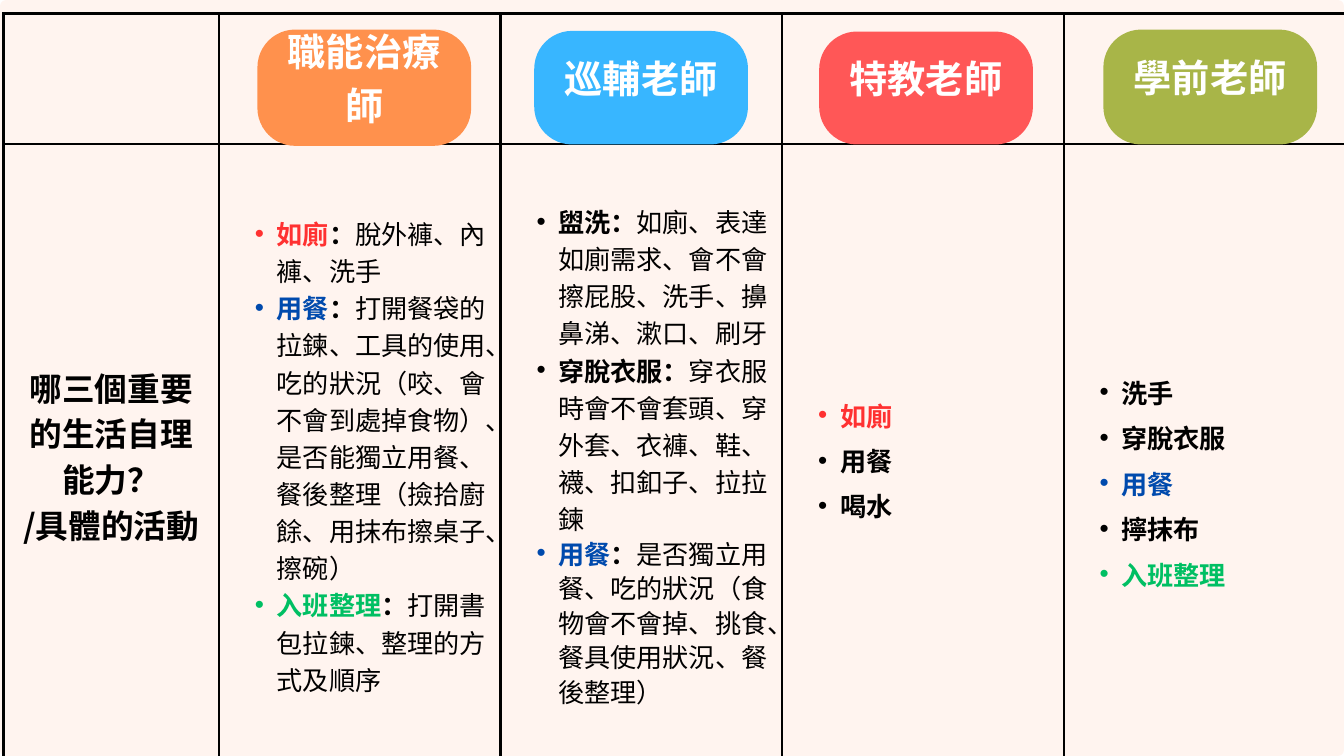
from dataclasses import dataclass

from lxml import etree
from pptx import Presentation
from pptx.dml.color import RGBColor
from pptx.enum.shapes import MSO_SHAPE
from pptx.enum.text import MSO_ANCHOR, PP_ALIGN
from pptx.oxml.ns import qn
from pptx.util import Pt

ROUND = MSO_SHAPE.ROUNDED_RECTANGLE
MIDDLE = MSO_ANCHOR.MIDDLE
CENTER = PP_ALIGN.CENTER
FONT = "Noto Sans CJK SC"
WIDE, HIGH = 1440, 810
COLORS = {
    "paper": "FFF4EF", "black": "000000", "white": "FFFFFF",
    "red": "FF3131", "blue": "004AAD", "green": "00BF63",
    "orange": "FF914D", "sky": "38B6FF", "coral": "FF5757", "olive": "A8B548",
}


@dataclass
class Pill:
    label: str
    color: str
    left: float
    top: float
    height: float


@dataclass
class Item:
    head: str
    color: str = "black"
    body: str = ""
    pitch: float = 48.7


@dataclass
class Column:
    items: list[Item]
    drop: float = 0


PILLS = [
    Pill("職能治療師", "orange", 275.8, 31.7, 124.6),
    Pill("巡輔老師", "sky", 572.4, 33.1, 121.7),
    Pill("特教老師", "coral", 877.7, 33.8, 121),
    Pill("學前老師", "olive", 1182.2, 31.7, 123.1),
]
COLUMNS = [
    Column([
        Item("如廁", "red", "脫外褲、內褲、洗手", 39.8),
        Item("用餐", "blue", "打開餐袋的拉鍊、工具的使用、吃的狀況（咬、會不會到處掉食物）、"
             "是否能獨立用餐、餐後整理（撿拾廚餘、用抹布擦桌子、擦碗）", 39.8),
        Item("入班整理", "green", "打開書包拉鍊、整理的方式及順序", 39.8),
    ]),
    Column([
        Item("盥洗", "black", "如廁、表達如廁需求、會不會擦屁股、洗手、擤鼻涕、漱口、刷牙", 39.8),
        Item("穿脫衣服", "black", "穿衣服時會不會套頭、穿外套、衣褲、鞋、襪、扣釦子、拉拉鍊", 39.8),
        Item("用餐", "blue", "是否獨立用餐、吃的狀況（食物會不會掉、挑食、餐具使用狀況、餐後整理）", 37),
    ]),
    Column([Item("如廁", "red"), Item("用餐"), Item("喝水")]),
    Column([Item("洗手"), Item("穿脫衣服"), Item("用餐", "blue"),
            Item("擰抹布"), Item("入班整理", "green")], drop=48.7),
]
ASK = ["哪三個重要的生活自理能力？", "/具體的活動"]
WIDTHS = [231.1] + [301.7] * 4
HEIGHTS = [139.7, 169.9, 169.9, 164.2, 165.6]


def shade(name: str) -> RGBColor:
    return RGBColor.from_string(COLORS[name])


def add_run(para, text: str, size: float, color: str, bold: bool = True) -> None:
    run = para.add_run()
    run.text = text
    font = run.font
    font.size, font.bold, font.name = Pt(size), bold, FONT
    font.color.rgb = shade(color)
    etree.SubElement(font._element, qn("a:ea"), typeface=FONT)


def next_para(frame, first: bool, pitch: float):
    para = frame.paragraphs[0] if first else frame.add_paragraph()
    para.line_spacing = Pt(pitch)
    return para


def add_block(slide, left: float, top: float, width: float, height: float,
              radius: float, color: str):
    block = slide.shapes.add_shape(ROUND, Pt(left), Pt(top), Pt(width), Pt(height))
    block.adjustments[0] = radius / min(width, height)
    block.shadow.inherit = False
    block.fill.solid()
    block.fill.fore_color.rgb = shade(color)
    block.line.fill.background()
    return block


def add_pill(slide, pill: Pill) -> None:
    block = add_block(slide, pill.left, pill.top, 229, pill.height, 40.5, pill.color)
    frame = block.text_frame
    frame.word_wrap = True
    frame.vertical_anchor = MIDDLE
    frame.margin_left = frame.margin_right = frame.margin_top = Pt(4.3)
    frame.margin_bottom = Pt(32.8)
    para = next_para(frame, True, 57.4)
    para.alignment = CENTER
    add_run(para, pill.label, 41, "white")


def add_bullet(para) -> None:
    props = para._p.get_or_add_pPr()
    props.set("marL", str(Pt(47)))
    props.set("indent", str(Pt(-23.5)))
    etree.SubElement(props, qn("a:buFont"), typeface="Arial")
    etree.SubElement(props, qn("a:buChar"), char="•")


def style_cell(cell) -> None:
    """Draw the black rules, clear the fill and set the insets."""
    props = cell._tc.get_or_add_tcPr()
    for side in ("lnL", "lnR", "lnT", "lnB"):
        line = etree.SubElement(props, qn(f"a:{side}"), w=str(Pt(3)))
        fill = etree.SubElement(line, qn("a:solidFill"))
        etree.SubElement(fill, qn("a:srgbClr"), val=COLORS["black"])
    cell.fill.background()
    cell.vertical_anchor = MIDDLE
    cell.margin_left = cell.margin_right = Pt(15)
    cell.margin_top = cell.margin_bottom = Pt(15)


def fill_column(cell, column: Column) -> None:
    cell.margin_top = Pt(15 + column.drop)
    for i, item in enumerate(column.items):
        para = next_para(cell.text_frame, i == 0, item.pitch)
        para.level = 1
        add_bullet(para)
        add_run(para, item.head, 28, item.color)
        if item.body:
            add_run(para, "：", 28, "black")
            add_run(para, item.body, 28, "black", False)


def add_grid(slide) -> None:
    frame = slide.shapes.add_table(len(HEIGHTS), len(WIDTHS), Pt(3.6), Pt(14.4),
                                   Pt(sum(WIDTHS)), Pt(sum(HEIGHTS)))
    table = frame.table
    table.first_row = table.horz_banding = False
    for column, width in zip(table.columns, WIDTHS):
        column.width = Pt(width)
    for row, height in zip(table.rows, HEIGHTS):
        row.height = Pt(height)
    for cell in table.iter_cells():
        style_cell(cell)
    for i in range(len(WIDTHS)):
        table.cell(1, i).merge(table.cell(len(HEIGHTS) - 1, i))
    for i, text in enumerate(ASK):
        para = next_para(table.cell(1, 0).text_frame, i == 0, 49)
        para.alignment = CENTER
        add_run(para, text, 35, "black")
    for i, column in enumerate(COLUMNS, 1):
        fill_column(table.cell(1, i), column)


def main() -> None:
    deck = Presentation()
    deck.slide_width, deck.slide_height = Pt(WIDE), Pt(HIGH)
    slide = deck.slides.add_slide(deck.slide_layouts[6])
    add_block(slide, 0, 0, WIDE, HIGH, 6.5, "paper")
    add_grid(slide)
    for pill in PILLS:
        add_pill(slide, pill)
    deck.save("out.pptx")


if __name__ == "__main__":
    main()
